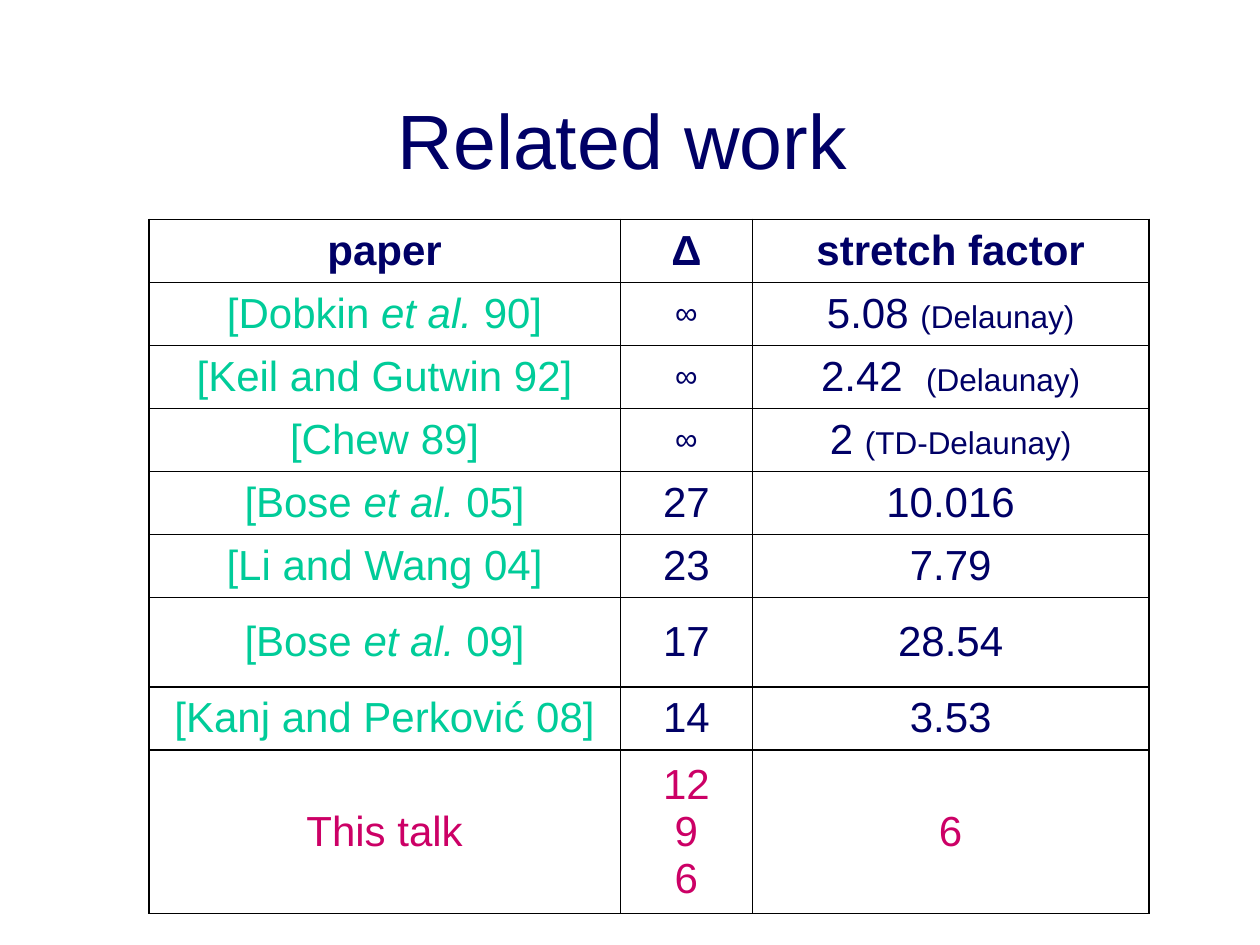
"""Build the "Related work" slide: a title above a table of spanner results."""
from lxml.etree import SubElement
from pptx import Presentation
from pptx.dml.color import RGBColor
from pptx.enum.text import MSO_ANCHOR, PP_ALIGN
from pptx.oxml.ns import qn
from pptx.util import Pt

COLORS = {"text": "000066", "citation": "00CC99", "talk": "CC0066",
          "border": "000000", "background": "FFFFFF"}
FONT = "Arial"
TITLE = "Related work"
TITLE_SIZE, BODY_SIZE, NOTE_SIZE = 44, 24, 18

ET_AL = ("et al.", "italic")
INFINITY = [("∞", "small")]
DELAUNAY = ("(Delaunay)", "small")
HEADER = ["paper", "Δ", "stretch factor"]
RESULTS = [
    [["[Dobkin ", ET_AL, " 90]"], INFINITY, ["5.08 ", DELAUNAY]],
    ["[Keil and Gutwin 92]", INFINITY, ["2.42  ", DELAUNAY]],
    ["[Chew 89]", INFINITY, ["2 ", ("(TD-Delaunay)", "small")]],
    [["[Bose ", ET_AL, " 05]"], "27", "10.016"],
    ["[Li and Wang 04]", "23", "7.79"],
    [["[Bose ", ET_AL, " 09]"], "17", "28.54"],
    ["[Kanj and Perković 08]", "14", "3.53"],
]
THIS_TALK = ["This talk", "12\n9\n6", "6"]

TITLE_BOX = (54, 23, 603.5, 113)
TABLE_LEFT, TABLE_TOP = 85, 125.3
COLUMN_WIDTHS = [269.5, 75.5, 226.5]
ROW_HEIGHTS = [36] * 6 + [51, 36, 88]


def write_paragraph(para, spans, color, size=BODY_SIZE, bold=False):
    para.alignment = PP_ALIGN.CENTER
    para.font.name = FONT
    para.font.size = Pt(size)
    para.font.bold = bold
    para.font.color.rgb = RGBColor.from_string(COLORS[color])
    for item in spans:
        text, style = (item, None) if isinstance(item, str) else item
        span = para.add_run()
        span.text = text
        if style == "italic":
            span.font.italic = True
        elif style == "small":
            span.font.size = Pt(NOTE_SIZE)


def add_borders(cell):
    properties = cell._tc.get_or_add_tcPr()
    for side in ("lnL", "lnR", "lnT", "lnB"):
        line = SubElement(properties, qn(f"a:{side}"), w=str(Pt(1)))
        fill = SubElement(line, qn("a:solidFill"))
        SubElement(fill, qn("a:srgbClr"), val=COLORS["border"])


def write_cell(cell, content, color, bold):
    add_borders(cell)
    cell.fill.solid()
    cell.fill.fore_color.rgb = RGBColor.from_string(COLORS["background"])
    cell.vertical_anchor = MSO_ANCHOR.MIDDLE
    lines = [[line] for line in content.split("\n")] if isinstance(content, str) else [content]
    frame = cell.text_frame
    for index, spans in enumerate(lines):
        para = frame.add_paragraph() if index else frame.paragraphs[0]
        write_paragraph(para, spans, color, bold=bold)


def add_title(page):
    box = page.shapes.add_textbox(*map(Pt, TITLE_BOX))
    frame = box.text_frame
    frame.word_wrap = True
    frame.vertical_anchor = MSO_ANCHOR.MIDDLE
    write_paragraph(frame.paragraphs[0], [TITLE], "text", TITLE_SIZE)


def add_results(page):
    rows = [HEADER, *RESULTS, THIS_TALK]
    table = page.shapes.add_table(
        len(rows), len(HEADER), Pt(TABLE_LEFT), Pt(TABLE_TOP),
        Pt(sum(COLUMN_WIDTHS)), Pt(sum(ROW_HEIGHTS))).table
    table.first_row = table.horz_banding = False
    for column, width in zip(table.columns, COLUMN_WIDTHS):
        column.width = Pt(width)
    for row, height in zip(table.rows, ROW_HEIGHTS):
        row.height = Pt(height)
    for r, row in enumerate(rows):
        for c, content in enumerate(row):
            if row is THIS_TALK:
                color = "talk"
            else:
                color = "citation" if c == 0 and row is not HEADER else "text"
            write_cell(table.cell(r, c), content, color, row is HEADER)


def main():
    deck = Presentation()
    deck.slide_width, deck.slide_height = Pt(720), Pt(540)
    page = deck.slides.add_slide(deck.slide_layouts[6])
    add_title(page)
    add_results(page)
    deck.save("out.pptx")


if __name__ == "__main__":
    main()
